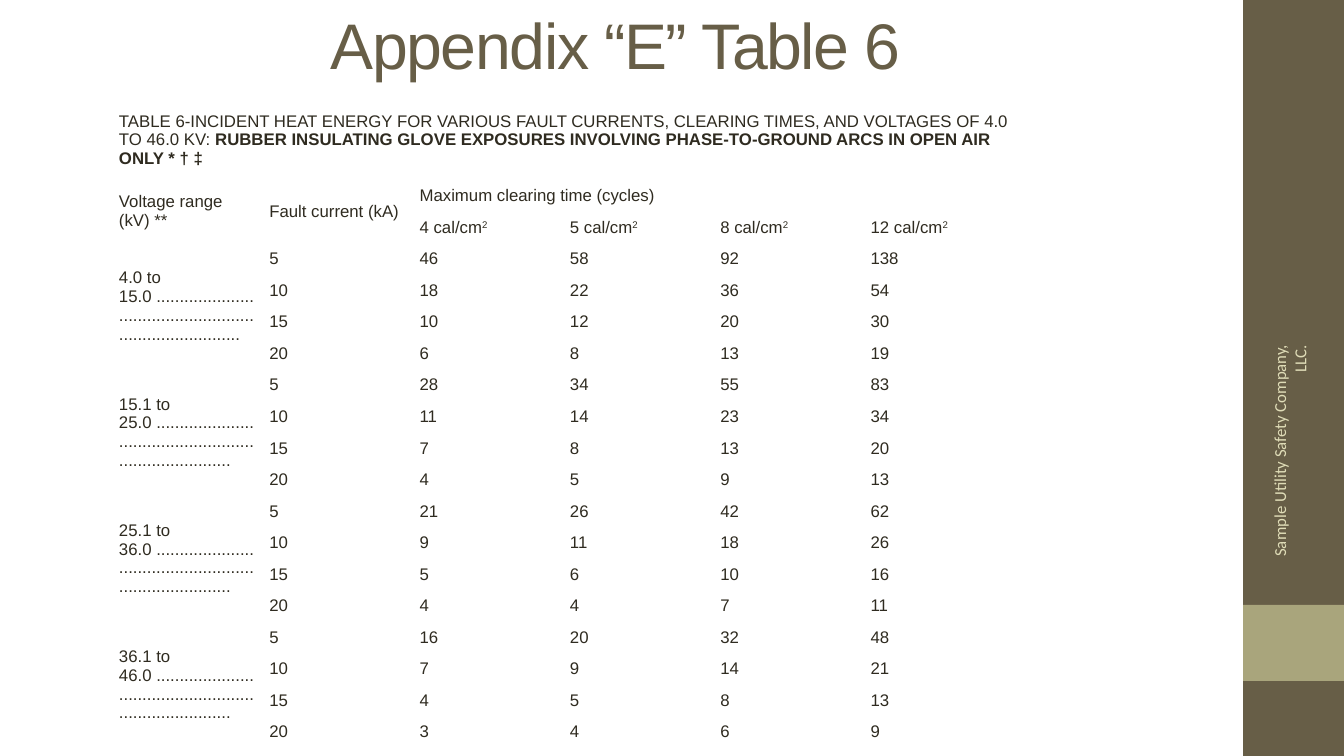
from pptx import Presentation
from pptx.dml.color import RGBColor
from pptx.enum.shapes import MSO_SHAPE
from pptx.enum.text import MSO_ANCHOR, PP_ALIGN
from pptx.util import Emu, Pt

THEME = {
    "olive": RGBColor.from_string("675E47"),
    "sage": RGBColor.from_string("A9A57C"),
    "cream": RGBColor.from_string("DFDCB7"),
    "ink": RGBColor.from_string("2F2B20"),
    "sans": "Arial",
    "side": "Calibri",
    "title": Pt(46),
    "body": Pt(12),
}
SCALE = 12192000 / 1344


def px(n):
    return Emu(round(n * SCALE))


def write(frame, runs, color, font="sans", size="body", align=PP_ALIGN.LEFT):
    """Fill the first paragraph with (text, style) runs; style is "", "bold" or "super"."""
    frame.word_wrap = True
    para = frame.paragraphs[0]
    para.alignment = align
    for text, style in runs:
        run = para.add_run()
        run.text = text
        looks = {"name": THEME[font], "size": THEME[size], "bold": style == "bold"}
        for key, value in looks.items():
            setattr(run.font, key, value)
        run.font.color.rgb = THEME[color]
        if style == "super":
            run.font._element.set("baseline", "30000")


deck = Presentation()
deck.slide_width, deck.slide_height = px(1344), px(756)
slide = deck.slides.add_slide(deck.slide_layouts[6])
shapes = slide.shapes

# Side band
for top, height, color in [(0, 756, "olive"), (605, 76, "sage")]:
    band = shapes.add_shape(MSO_SHAPE.RECTANGLE, px(1243), px(top), px(101), px(height))
    band.shadow.inherit = False
    band.fill.solid()
    band.fill.fore_color.rgb = THEME[color]
    band.line.fill.background()

# Title
title = shapes.add_textbox(px(45), px(0), px(1141), px(88)).text_frame
title.vertical_anchor = MSO_ANCHOR.MIDDLE
write(title, [("Appendix “E” Table 6", "")], "olive", size="title", align=PP_ALIGN.CENTER)
title.paragraphs[0].runs[0].font._element.set("spc", "-100")

# Table content: (row, column, row span, column span, runs)
LIMITS = [4, 5, 8, 12]
FAULTS = [5, 10, 15, 20]
RANGES = [
    ("4.0 to 15.0 ", 76, [(46, 58, 92, 138), (18, 22, 36, 54), (10, 12, 20, 30), (6, 8, 13, 19)]),
    ("15.1 to 25.0 ", 74, [(28, 34, 55, 83), (11, 14, 23, 34), (7, 8, 13, 20), (4, 5, 9, 13)]),
    ("25.1 to 36.0 ", 74, [(21, 26, 42, 62), (9, 11, 18, 26), (5, 6, 10, 16), (4, 4, 7, 11)]),
    ("36.1 to 46.0 ", 74, [(16, 20, 32, 48), (7, 9, 14, 21), (4, 5, 8, 13), (3, 4, 6, 9)]),
]
items = [
    (0, 0, 1, 6, [
        ("TABLE 6-INCIDENT HEAT ENERGY FOR VARIOUS FAULT CURRENTS, CLEARING TIMES, "
         "AND VOLTAGES OF 4.0 TO 46.0 KV: ", ""),
        ("RUBBER INSULATING GLOVE EXPOSURES INVOLVING PHASE-TO-GROUND ARCS IN OPEN "
         "AIR ONLY * † ‡", "bold"),
    ]),
    (1, 0, 2, 1, [("Voltage range (kV) **", "")]),
    (1, 1, 2, 1, [("Fault current (kA)", "")]),
    (1, 2, 1, 4, [("Maximum clearing time (cycles)", "")]),
]
for col, limit in enumerate(LIMITS, 2):
    items.append((2, col, 1, 1, [(f"{limit} cal/cm", ""), ("2", "super")]))
for group, (label, dots, times) in enumerate(RANGES):
    first = 3 + group * len(FAULTS)
    items.append((first, 0, len(FAULTS), 1, [(label + "." * dots, "")]))
    for row, (fault, cycles) in enumerate(zip(FAULTS, times), first):
        for col, value in enumerate((fault, *cycles), 1):
            items.append((row, col, 1, 1, [(str(value), "")]))

# Table
grid = shapes.add_table(19, 6, px(113), px(100), px(902), px(648)).table
grid.first_row = grid.horz_banding = False
for col in grid.columns:
    col.width = px(902) // 6
for index, row in enumerate(grid.rows):
    row.height = px(568) // 18 if index else px(80)
CELL = {
    "vertical_anchor": MSO_ANCHOR.MIDDLE,
    "margin_left": px(6),
    "margin_right": px(6),
    "margin_top": px(3),
    "margin_bottom": px(3),
}
for cell in grid.iter_cells():
    cell.fill.background()
    for key, value in CELL.items():
        setattr(cell, key, value)
for row, col, down, across, runs in items:
    cell = grid.cell(row, col)
    if down * across > 1:
        cell.merge(grid.cell(row + down - 1, col + across - 1))
    write(cell.text_frame, runs, "ink")

# Sideways footer
foot = shapes.add_textbox(px(1159), px(439), px(261), px(53))
foot.rotation = 270
foot.text_frame.vertical_anchor = MSO_ANCHOR.MIDDLE
foot.text_frame.margin_left = px(28)
write(foot.text_frame, [("Sample Utility Safety Company, LLC.", "")], "cream",
      font="side", align=PP_ALIGN.RIGHT)

deck.save("out.pptx")
